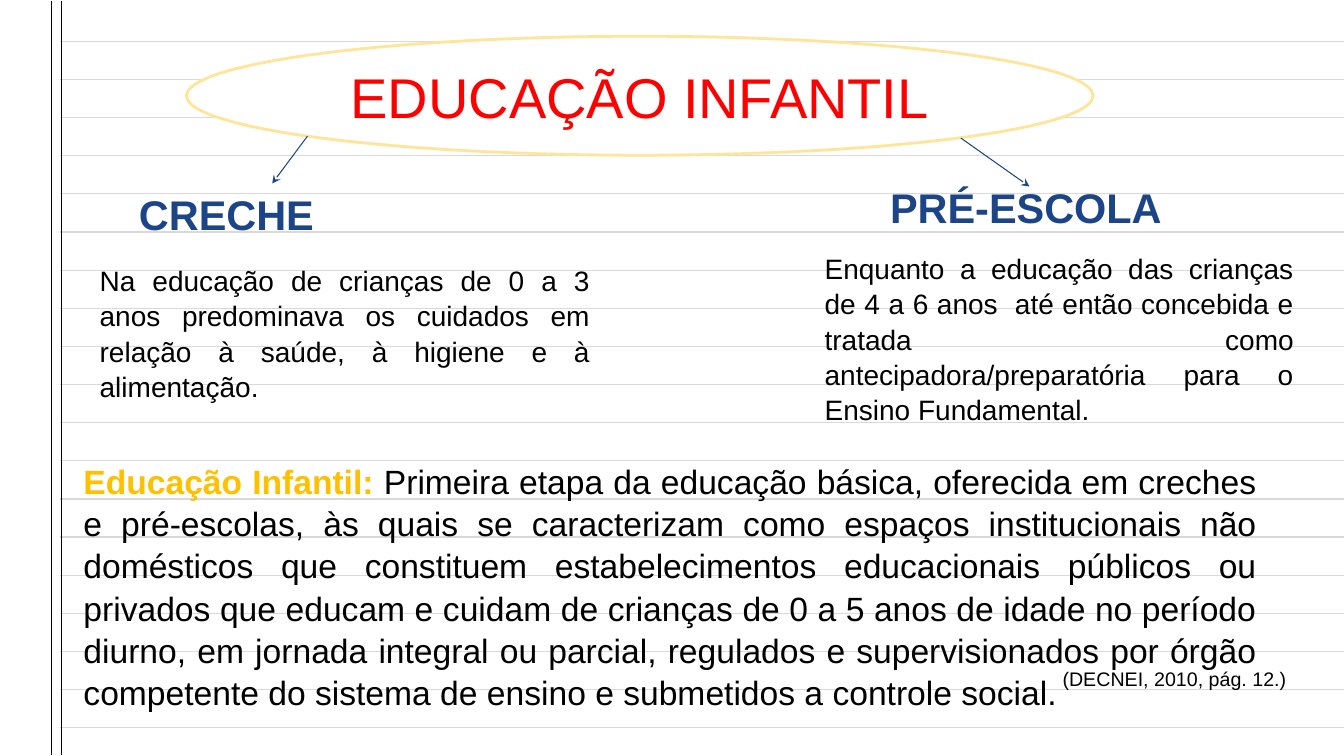
import pptx
import pptx.util
import pptx.dml.color
import pptx.enum.shapes
import pptx.enum.text
import pptx.oxml
import pptx.oxml.ns

Inches = pptx.util.Inches
Pt = pptx.util.Pt
RGBColor = pptx.dml.color.RGBColor
Align = pptx.enum.text.PP_ALIGN
Anchor = pptx.enum.text.MSO_ANCHOR

WHITE = RGBColor(0xFF, 0xFF, 0xFF)
BLACK = RGBColor(0, 0, 0)
RED = RGBColor(0xFF, 0, 0)
BLUE = RGBColor(0x1C, 0x45, 0x87)
GOLD = RGBColor(0xFF, 0xC0, 0)
CREAM = RGBColor(0xFF, 0xE5, 0x99)
GRAY = RGBColor(0xD9, 0xD9, 0xD9)

WIDTH, HEIGHT = 13.33, 7.5
OVAL = (1.85, 0.36, 8.99, 1.18)
TITLE = [("EDUCAÇÃO INFANTIL", 40, RED, False)]

# box, alignment, line spacing, wrap, runs of (text, size, colour, bold)
TEXTS = [
    ((8.73, 1.85, 2.96, 0.53), Align.LEFT, 0.8, True,
     [("PRÉ-ESCOLA", 29.6, BLUE, True)]),
    ((1.28, 1.92, 2.96, 0.53), Align.LEFT, 0.8, True,
     [("CRECHE", 29.6, BLUE, True)]),
    ((0.89, 2.55, 5.06, 1.45), Align.JUSTIFY, 1.05, True,
     [("Na educação de crianças de 0 a 3 anos predominava os cuidados em "
       "relação à saúde, à higiene e à alimentação.", 20, BLACK, False)]),
    ((8.08, 2.43, 4.85, 1.78), Align.JUSTIFY, 1.05, True,
     [("Enquanto a educação das crianças de 4 a 6 anos  até então concebida "
       "e tratada como antecipadora/preparatória para o Ensino Fundamental.",
       20, BLACK, False)]),
    ((0.73, 4.5, 11.83, 2.52), Align.JUSTIFY, 1.05, True,
     [("Educação Infantil: ", 24, GOLD, True),
      ("Primeira etapa da educação básica, oferecida em creches e "
       "pré-escolas, às quais se caracterizam como espaços institucionais "
       "não domésticos que constituem estabelecimentos educacionais públicos "
       "ou privados que educam e cuidam de crianças de 0 a 5 anos de idade no "
       "período diurno, em jornada integral ou parcial, regulados e "
       "supervisionados por órgão competente do sistema de ensino e "
       "submetidos a controle social.", 24, BLACK, False)]),
    ((10.44, 6.57, 2.43, 0.34), Align.LEFT, 1.0, False,
     [("(DECNEI, 2010, pág. 12.)", 14, BLACK, False)]),
]

ARROWS = [(3.05, 1.35, 2.7, 1.82), (9.53, 1.37, 10.21, 1.85)]
MARGINS = (0.51, 0.61)
RULES, FIRST, LAST = 19, 0.41, 7.22


def element(tag):
    return pptx.oxml.parse_xml(f"<a:{tag} {pptx.oxml.ns.nsdecls('a')}/>")


def line(slide, ends, color, width):
    kind = pptx.enum.shapes.MSO_CONNECTOR.STRAIGHT
    link = slide.shapes.add_connector(kind, *map(Inches, ends))
    link.line.color.rgb = color
    link.line.width = Pt(width)
    link._element.spPr.append(element("effectLst"))
    return link


def write(shape, runs, align, spacing, wrap=True, anchor=Anchor.TOP):
    frame = shape.text_frame
    frame.word_wrap = wrap
    frame.auto_size = pptx.enum.text.MSO_AUTO_SIZE.NONE
    frame.vertical_anchor = anchor
    frame.margin_left = frame.margin_right = Inches(0.1)
    frame.margin_top = frame.margin_bottom = Inches(0.05)
    para = frame.paragraphs[0]
    para.alignment = align
    para.line_spacing = spacing
    for text, size, color, bold in runs:
        run = para.add_run()
        run.text = text
        run.font.name = "Arial"
        run.font.size = Pt(size)
        run.font.color.rgb = color
        run.font.bold = bold


def paper(slide):
    """Draw the ruled notebook sheet."""
    slide.background.fill.solid()
    slide.background.fill.fore_color.rgb = WHITE
    step = (LAST - FIRST) / (RULES - 1)
    for i in range(RULES):
        y = FIRST + i * step
        line(slide, (0.6, y, WIDTH, y), GRAY, 0.86)
    for x in MARGINS:
        line(slide, (x, 0.01, x, 7.49), BLACK, 0.75)


def heading(slide):
    """Draw the oval and lay the title over it."""
    box = [Inches(v) for v in OVAL]
    oval = slide.shapes.add_shape(pptx.enum.shapes.MSO_SHAPE.OVAL, *box)
    oval.shadow.inherit = False
    oval.fill.solid()
    oval.fill.fore_color.rgb = WHITE
    oval.line.color.rgb = CREAM
    oval.line.width = Pt(2)
    title = slide.shapes.title
    title.left, title.top, title.width, title.height = box
    write(title, TITLE, Align.CENTER, 1.0, anchor=Anchor.MIDDLE)
    oval._element.addnext(title._element)


def main():
    deck = pptx.Presentation()
    deck.slide_width, deck.slide_height = Inches(WIDTH), Inches(HEIGHT)
    slide = deck.slides.add_slide(deck.slide_layouts[5])
    paper(slide)
    heading(slide)
    for box, align, spacing, wrap, runs in TEXTS:
        shape = slide.shapes.add_textbox(*map(Inches, box))
        write(shape, runs, align, spacing, wrap)
    for ends in ARROWS:
        arrow = line(slide, ends, BLUE, 0.75)
        tip = element("tailEnd")
        tip.set("type", "stealth")
        arrow.line._get_or_add_ln().append(tip)
    deck.save("out.pptx")


if __name__ == "__main__":
    main()
